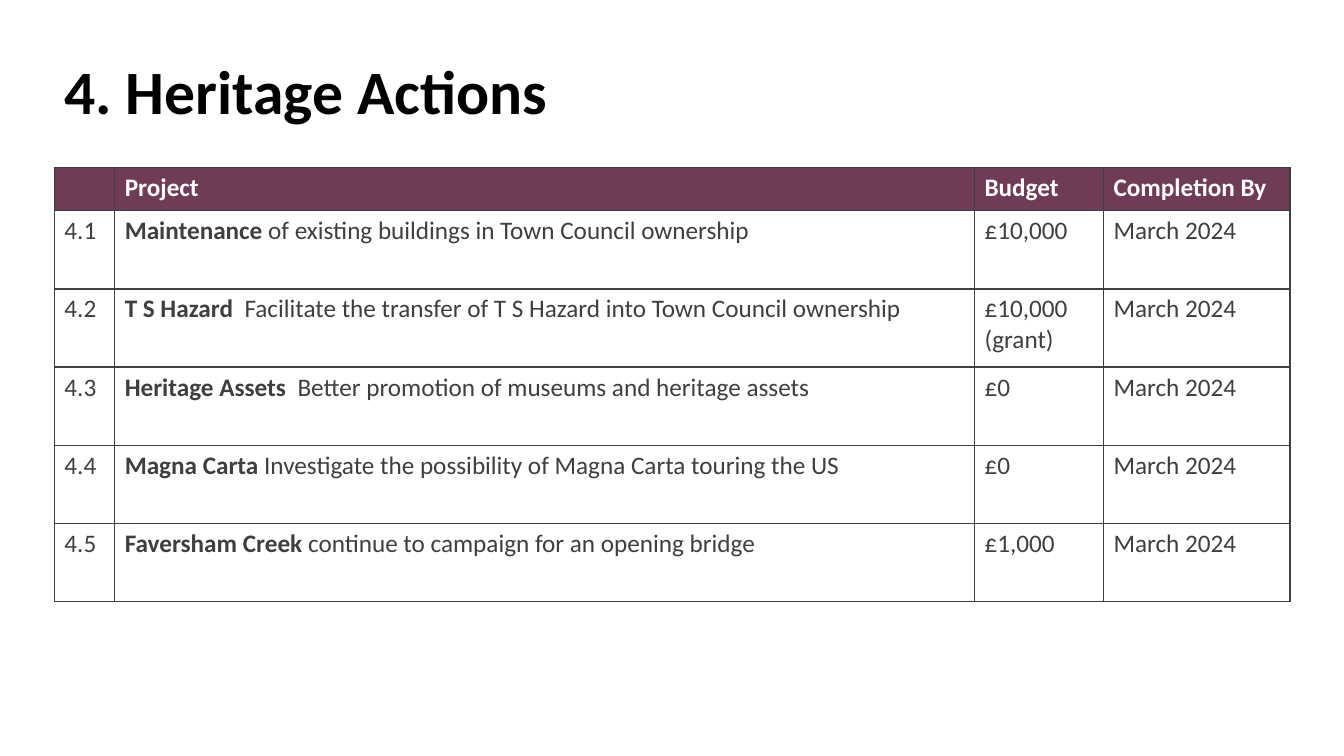
from lxml import etree
from pptx import Presentation
from pptx.dml.color import RGBColor
from pptx.enum.text import MSO_ANCHOR, PP_ALIGN
from pptx.oxml.ns import qn
from pptx.util import Cm, Pt

TITLE = "4. Heritage Actions"
HEADINGS = ["", "Project", "Budget", "Completion By"]
DEADLINE = "March 2024"
ACTIONS = [
    ("Maintenance ", "of existing buildings in Town Council ownership", "£10,000"),
    ("T S Hazard  ", "Facilitate the transfer of T S Hazard into Town Council ownership",
     "£10,000 (grant)"),
    ("Heritage Assets  ", "Better promotion of museums and heritage assets", "£0"),
    ("Magna Carta ", "Investigate the possibility of Magna Carta touring the US", "£0"),
    ("Faversham Creek ", "continue to campaign for an opening bridge", "£1,000"),
]

BLACK = RGBColor(0x00, 0x00, 0x00)
WHITE = RGBColor(0xFF, 0xFF, 0xFF)
GREY = RGBColor(0x3F, 0x3F, 0x3F)
PLUM = RGBColor(0x70, 0x3B, 0x56)
LEFT, ANCHOR_MIDDLE = PP_ALIGN.LEFT, MSO_ANCHOR.MIDDLE
FONT = "Calibri"
TITLE_ONLY = 5

MARGIN = Cm(1.37)
TABLE_TOP = Cm(4.22)
COLUMN_WIDTHS = [Cm(1.52), Cm(21.67), Cm(3.25), Cm(4.7)]
HEADER_HEIGHT, ACTION_HEIGHT = Cm(1.09), Cm(1.97)


def add_span(para, text, size, color, bold):
    """Append one formatted run to a paragraph."""
    span = para.add_run()
    span.text = text
    span.font.name = FONT
    span.font.size = Pt(size)
    span.font.bold = bold
    span.font.color.rgb = color


def add_borders(cell):
    """Draw a thin grey line on all four sides of a cell."""
    properties = cell._tc.get_or_add_tcPr()
    for side in ("lnL", "lnR", "lnT", "lnB"):
        line = etree.SubElement(properties, qn(f"a:{side}"), w=str(Pt(1)))
        fill = etree.SubElement(line, qn("a:solidFill"))
        etree.SubElement(fill, qn("a:srgbClr"), val=str(GREY))


def add_title(page):
    """Place and format the slide title."""
    box = page.shapes.title
    box.left, box.top, box.width, box.height = MARGIN, Cm(0.53), Cm(30.18), Cm(3.68)
    box.text_frame.vertical_anchor = ANCHOR_MIDDLE
    para = box.text_frame.paragraphs[0]
    para.alignment = LEFT
    para.line_spacing = 0.9
    add_span(para, TITLE, 44, BLACK, True)


def add_actions_table(page):
    """Build the table of heritage actions."""
    rows = [[[(heading, True)] if heading else [] for heading in HEADINGS]]
    for number, (name, detail, budget) in enumerate(ACTIONS, start=1):
        rows.append([[(f"4.{number}", False)], [(name, True), (detail, False)],
                     [(budget, False)], [(DEADLINE, False)]])
    heights = [HEADER_HEIGHT] + [ACTION_HEIGHT] * len(ACTIONS)
    table = page.shapes.add_table(len(rows), len(HEADINGS), MARGIN, TABLE_TOP,
                                  sum(COLUMN_WIDTHS), sum(heights)).table
    table.first_row = table.horz_banding = False
    for column, width in zip(table.columns, COLUMN_WIDTHS):
        column.width = width
    for row_index, (spans_by_cell, height) in enumerate(zip(rows, heights)):
        table.rows[row_index].height = height
        is_header = row_index == 0
        for cell, spans in zip(table.rows[row_index].cells, spans_by_cell):
            add_borders(cell)
            if is_header:
                cell.fill.solid()
                cell.fill.fore_color.rgb = PLUM
            else:
                cell.fill.background()
            for text, bold in spans:
                add_span(cell.text_frame.paragraphs[0], text, 18,
                         WHITE if is_header else GREY, bold)


def main():
    """Create the heritage actions slide and save it."""
    deck = Presentation()
    deck.slide_width, deck.slide_height = Cm(33.87), Cm(19.05)
    page = deck.slides.add_slide(deck.slide_layouts[TITLE_ONLY])
    add_title(page)
    add_actions_table(page)
    deck.save("out.pptx")


if __name__ == "__main__":
    main()
